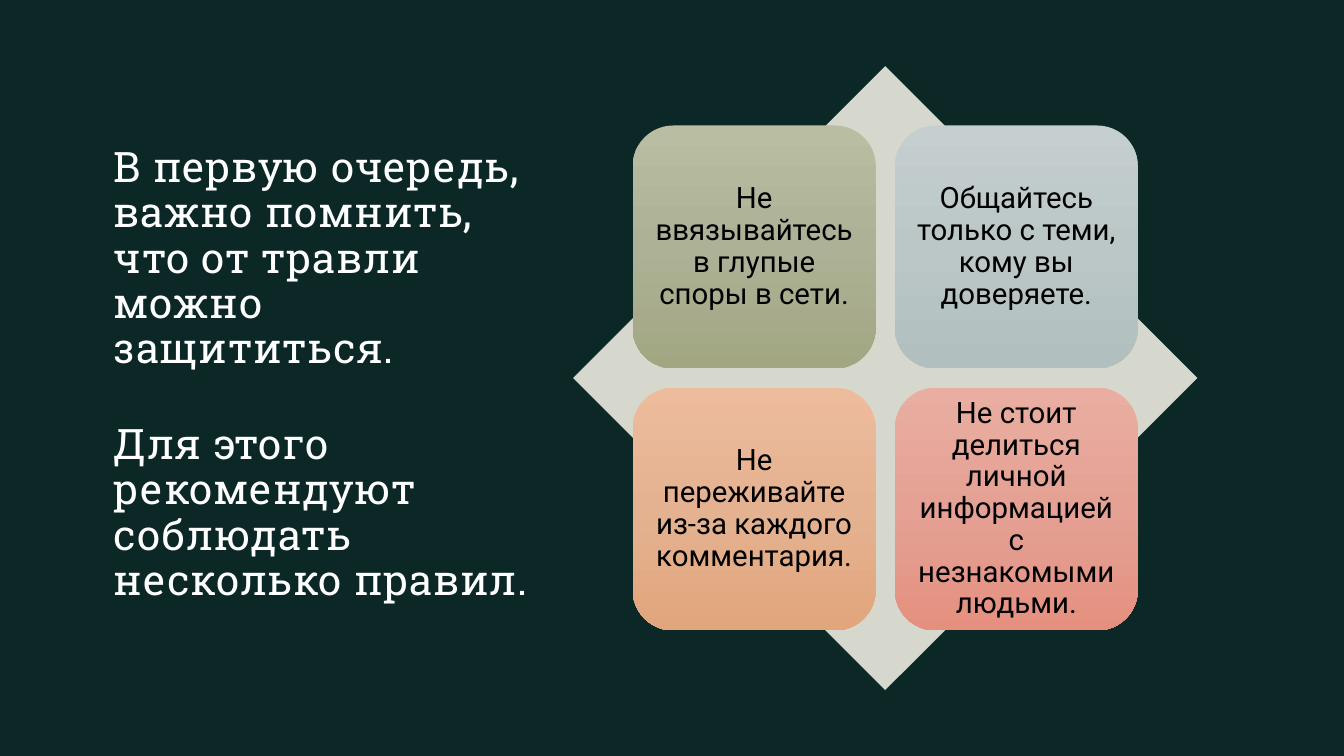
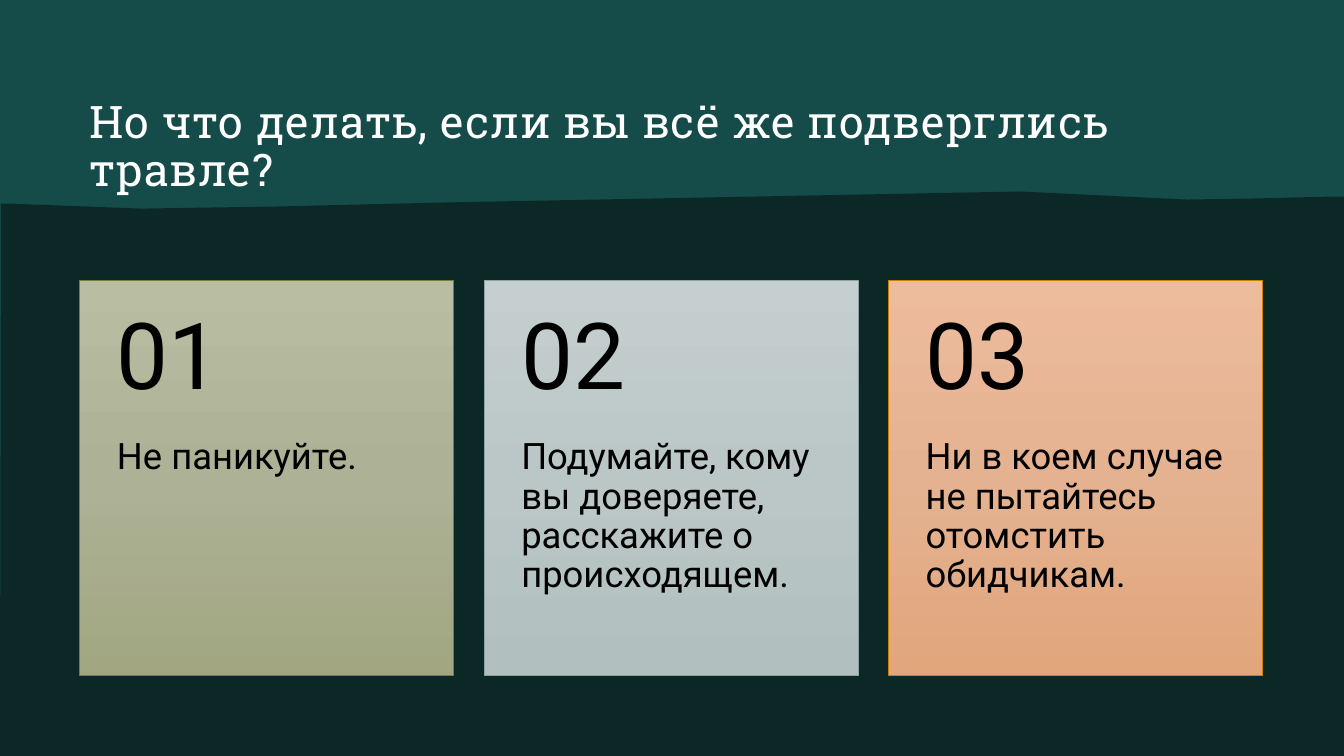
from copy import deepcopy

from pptx import Presentation
from pptx.dml.color import RGBColor
from pptx.enum.shapes import MSO_SHAPE
from pptx.enum.text import MSO_ANCHOR, MSO_AUTO_SIZE, PP_ALIGN
from pptx.oxml.ns import qn
from pptx.util import Inches, Pt

LEFT, CENTER = PP_ALIGN.LEFT, PP_ALIGN.CENTER
TOP, MIDDLE = MSO_ANCHOR.TOP, MSO_ANCHOR.MIDDLE
NO_AUTOFIT = MSO_AUTO_SIZE.NONE
DIAMOND, ROUNDED, RECTANGLE = MSO_SHAPE.DIAMOND, MSO_SHAPE.ROUNDED_RECTANGLE, MSO_SHAPE.RECTANGLE

WIDTH, HEIGHT = 13.33, 7.5
TITLE_FONT, BODY_FONT = "Roboto Slab", "Roboto"
DARK = RGBColor(0x0B, 0x28, 0x27)
TEAL = RGBColor(0x15, 0x4C, 0x4A)
STONE = RGBColor(0xD6, 0xD8, 0xCE)
WHITE = RGBColor(0xFF, 0xFF, 0xFF)
BLACK = RGBColor(0x00, 0x00, 0x00)
OLIVE_LINE = RGBColor(0x76, 0x7E, 0x37)
GRAY_LINE = RGBColor(0x8F, 0xA3, 0xA3)
ORANGE_LINE = RGBColor(0xCE, 0x7F, 0x01)
# Gradients from top to bottom
OLIVE = (RGBColor(0xB9, 0xBD, 0xA2), RGBColor(0xAD, 0xB1, 0x96), RGBColor(0xA2, 0xA7, 0x82))
GRAY = (RGBColor(0xC6, 0xCF, 0xCF), RGBColor(0xBB, 0xC6, 0xC6), RGBColor(0xB1, 0xBF, 0xBF))
ORANGE = (RGBColor(0xED, 0xBC, 0x9D), RGBColor(0xE4, 0xB2, 0x90), RGBColor(0xE1, 0xA6, 0x7C))
RED = (RGBColor(0xE9, 0xAE, 0xA1), RGBColor(0xE4, 0xA1, 0x94), RGBColor(0xE5, 0x90, 0x7F))


def write(shape, text, size, insets, font=BODY_FONT, color=BLACK, align=LEFT, anchor=TOP):
    """Fill a shape with text; insets are left, top, right, bottom in inches."""
    frame = shape.text_frame
    frame.text = text
    frame.word_wrap = True
    frame.auto_size = NO_AUTOFIT
    frame.vertical_anchor = anchor
    (frame.margin_left, frame.margin_top,
     frame.margin_right, frame.margin_bottom) = [Inches(inset) for inset in insets]
    for para in frame.paragraphs:
        para.alignment = align
        para.line_spacing = 0.9
        for span in para.runs:
            span.font.name = font
            span.font.size = Pt(size)
            span.font.color.rgb = color


def fill_gradient(shape, colors):
    shape.shadow.inherit = False
    shape.fill.gradient()
    shape.fill.gradient_angle = 270
    stop_list = shape._element.spPr.find(qn("a:gradFill")).find(qn("a:gsLst"))
    stop_list.insert(1, deepcopy(stop_list[0]))
    for stop, position, color in zip(shape.fill.gradient_stops, (0, 0.5, 1), colors):
        stop.position = position
        stop.color.rgb = color


deck = Presentation()
deck.slide_width, deck.slide_height = Inches(WIDTH), Inches(HEIGHT)

# Both slides: background and title
pages = []
for background, title_text, title_size, title_box in (
    (DARK, "В первую очередь, важно помнить, что от травли можно защититься.\n"
           "Для этого рекомендуют соблюдать несколько правил.", 30, (1.13, 1.41, 4.37, 5.04)),
    (TEAL, "Но что делать, если вы всё же подверглись травле?", 32, (0.89, 0.95, 11.5, 0.75)),
):
    page = deck.slides.add_slide(deck.slide_layouts[5])
    page.background.fill.solid()
    page.background.fill.fore_color.rgb = background
    title = page.shapes.title
    title.left, title.top, title.width, title.height = [Inches(length) for length in title_box]
    write(title, title_text, title_size, (0, 0.04, 0, 0), TITLE_FONT, WHITE)
    for para in title.text_frame.paragraphs:
        for span in para.runs:
            span.font._element.set("spc", "50")
    for para in title.text_frame.paragraphs[1:]:
        para.space_before = Pt(36)
    pages.append(page)
rules_page, steps_page = pages

# Slide 1: four rules on a diamond
CENTER_X, CENTER_Y = 8.78, HEIGHT / 2
DIAMOND_SIZE, TILE, TILE_GAP = 6.19, 2.41, 0.19
diamond = rules_page.shapes.add_shape(
    DIAMOND, Inches(CENTER_X - DIAMOND_SIZE / 2), Inches(CENTER_Y - DIAMOND_SIZE / 2),
    Inches(DIAMOND_SIZE), Inches(DIAMOND_SIZE))
diamond.shadow.inherit = False
diamond.fill.solid()
diamond.fill.fore_color.rgb = STONE
diamond.line.fill.background()

rules = (
    ("Не ввязывайтесь в глупые споры в сети.", OLIVE),
    ("Общайтесь только с теми, кому вы доверяете.", GRAY),
    ("Не переживайте из-за каждого комментария.", ORANGE),
    ("Не стоит делиться личной информацией с незнакомыми людьми.", RED),
)
for index, (rule, colors) in enumerate(rules):
    row, column = divmod(index, 2)
    left = CENTER_X - TILE - TILE_GAP / 2 + column * (TILE + TILE_GAP)
    top = CENTER_Y - TILE - TILE_GAP / 2 + row * (TILE + TILE_GAP)
    tile = rules_page.shapes.add_shape(ROUNDED, Inches(left), Inches(top), Inches(TILE), Inches(TILE))
    fill_gradient(tile, colors)
    tile.line.fill.background()
    write(tile, rule, 21, (0.09,) * 4, align=CENTER, anchor=MIDDLE)

# Slide 2: dark ground with a torn upper edge
edge = ((0.01, 2.02), (0.08, 2.02), (1.4, 2.07), (2.72, 2.05), (4.36, 2.01), (10.12, 1.9),
        (11.77, 1.98), (12.43, 1.97), (13.23, 1.95), (WIDTH, 1.95))
outline = [(Inches(x), Inches(y)) for x, y in edge + ((WIDTH, HEIGHT),)]
builder = steps_page.shapes.build_freeform(0, Inches(HEIGHT))
builder.add_line_segments(outline, close=True)
ground = builder.convert_to_shape()
ground.shadow.inherit = False
ground.fill.solid()
ground.fill.fore_color.rgb = DARK
ground.line.fill.background()

# Slide 2: three numbered cards
CARD_LEFT, CARD_TOP, CARD_WIDTH, CARD_HEIGHT, CARD_GAP = 0.79, 2.78, 3.71, 3.92, 0.3
NUMBER_HEIGHT, PADDING = 0.4 * CARD_HEIGHT, 0.37
steps = (
    ("Не паникуйте.", OLIVE, OLIVE_LINE),
    ("Подумайте, кому вы доверяете, расскажите о происходящем.", GRAY, GRAY_LINE),
    ("Ни в коем случае не пытайтесь отомстить обидчикам.", ORANGE, ORANGE_LINE),
)
for index, (step, colors, line_color) in enumerate(steps):
    left = Inches(CARD_LEFT + index * (CARD_WIDTH + CARD_GAP))
    card = steps_page.shapes.add_shape(
        RECTANGLE, left, Inches(CARD_TOP), Inches(CARD_WIDTH), Inches(CARD_HEIGHT))
    fill_gradient(card, colors)
    card.line.color.rgb = line_color
    card.line.width = Pt(0.5)
    write(card, step, 26, (PADDING, NUMBER_HEIGHT, PADDING, 0.36))
    number = steps_page.shapes.add_textbox(
        left, Inches(CARD_TOP), Inches(CARD_WIDTH), Inches(NUMBER_HEIGHT))
    write(number, f"{index + 1:02}", 66, (PADDING, 0.18, PADDING, 0.18), anchor=MIDDLE)

deck.save("out.pptx")
